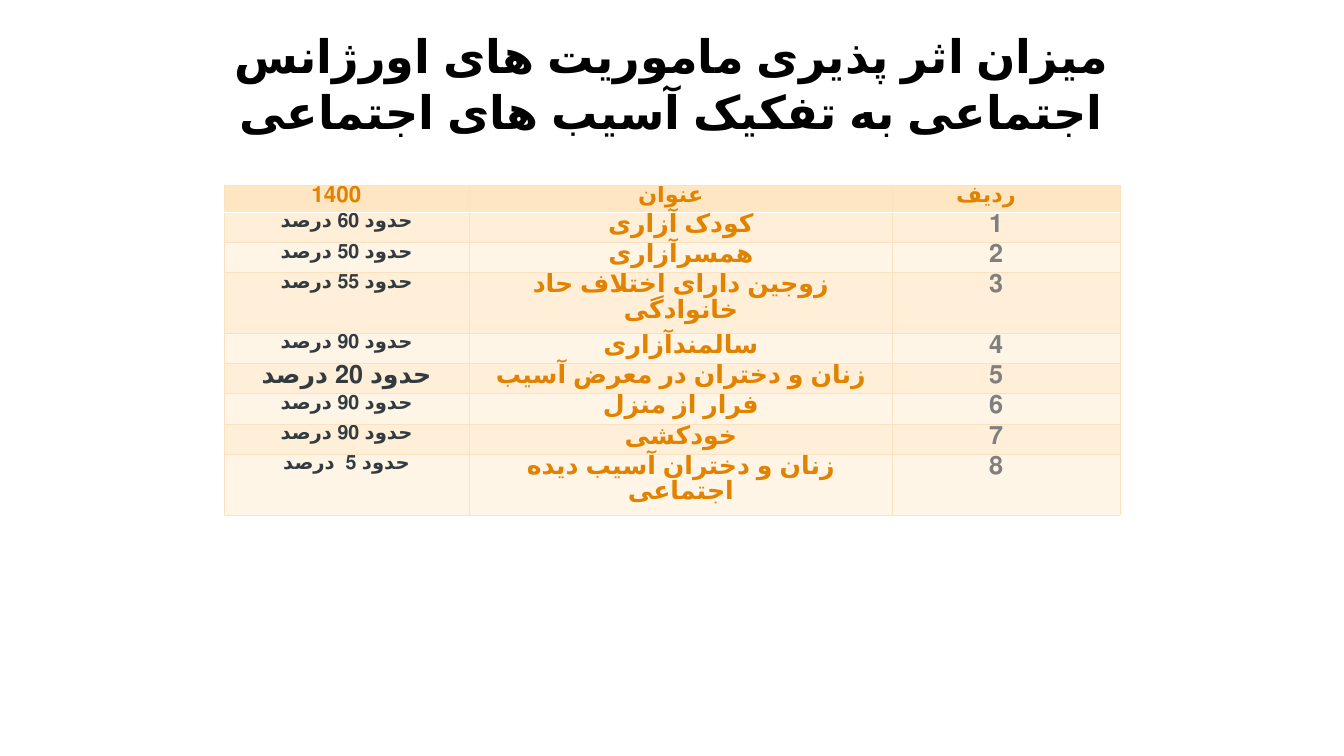
from lxml import etree
from pptx import Presentation
from pptx import util as u
from pptx.dml.color import RGBColor
from pptx.enum import text
from pptx.oxml.ns import qn

PX = 9144  # EMU per px, at 100 px to the inch
COLORS = {
    "title": "000000",
    "accent": "E18300",
    "share": "323C40",
    "number": "7F7F7F",
    "header": "FFE6C3",
    "band": "FFEFD9",
    "plain": "FFF5E7",
    "border": "FBE1BD",
    "rule": "FFFFFF",
}
LEFT, WIDTH = 444, 1778
COLUMN_WIDTHS = [487, 840, 451]
HEADER_HEIGHT, LINE_HEIGHT, TWO_LINE_HEIGHT = 54, 60, 116
LEVEL_INDENT = 40

TITLE = "میزان اثر پذیری ماموریت های اورژانس\nاجتماعی به تفکیک آسیب های اجتماعی"
HEADINGS = [("1400", 1), ("عنوان", 1), ("ردیف", 2)]
# share, harm, size of the share text, height of the row
HARMS = [
    ("حدود 60 درصد", "کودک آزاری", 28, LINE_HEIGHT),
    ("حدود 50 درصد", "همسرآزاری", 28, LINE_HEIGHT),
    ("حدود 55 درصد", "زوجین دارای اختلاف حاد\nخانوادگی", 28, TWO_LINE_HEIGHT),
    ("حدود 90 درصد", "سالمندآزاری", 28, LINE_HEIGHT),
    ("حدود 20 درصد", "زنان و دختران در معرض آسیب", 36, LINE_HEIGHT),
    ("حدود 90 درصد", "فرار از منزل", 28, LINE_HEIGHT),
    ("حدود 90 درصد", "خودکشی", 28, LINE_HEIGHT),
    ("حدود 5  درصد", "زنان و دختران آسیب دیده\nاجتماعی", 28, TWO_LINE_HEIGHT),
]


def px(length):
    return u.Emu(length * PX)


def write(frame, words, *, size, color, font="Arial", level=0):
    """Put one bold, centred, right-to-left paragraph into a text frame."""
    paragraph = frame.paragraphs[0]
    paragraph.alignment = text.PP_ALIGN.CENTER
    paragraph.level = level
    properties = paragraph._p.get_or_add_pPr()
    properties.set("rtl", "1")
    properties.set("marL", str(px(level * LEVEL_INDENT)))
    properties.set("indent", "0")
    for index, line in enumerate(words.split("\n")):
        if index:
            paragraph.add_line_break()
        run = paragraph.add_run()
        run.text = line
        run.font.size = u.Pt(size)
        run.font.bold = True
        run.font.color.rgb = RGBColor.from_string(COLORS[color])
        run.font.name = font
        run._r.get_or_add_rPr().set("lang", "fa-IR")
    for line_break in paragraph._p.findall(qn("a:br")):
        etree.SubElement(line_break, qn("a:rPr"), sz=str(size * 100), b="1")


class SlideBuilder:
    def __init__(self, slide):
        self.slide = slide

    def title(self, words, left, top, width, height):
        heading = self.slide.shapes.title
        heading.left, heading.top = px(left), px(top)
        heading.width, heading.height = px(width), px(height)
        frame = heading.text_frame
        frame.margin_left = frame.margin_right = px(6)
        frame.margin_top = frame.margin_bottom = px(6)
        frame.word_wrap = True
        frame.vertical_anchor = text.MSO_ANCHOR.MIDDLE
        frame.auto_size = text.MSO_AUTO_SIZE.SHAPE_TO_FIT_TEXT
        write(frame, words, size=66, color="title")

    def table(self, left, top, column_widths, row_heights):
        table = self.slide.shapes.add_table(
            len(row_heights), len(column_widths), px(left), px(top),
            px(sum(column_widths)), px(sum(row_heights))).table
        for column, width in zip(table.columns, column_widths):
            column.width = px(width)
        for row, height in zip(table.rows, row_heights):
            row.height = px(height)
        return table

    def border(self, cell, side, color, points):
        line = etree.SubElement(cell._tc.get_or_add_tcPr(), qn(f"a:ln{side}"),
                                w=str(u.Pt(points)))
        fill = etree.SubElement(line, qn("a:solidFill"))
        etree.SubElement(fill, qn("a:srgbClr"), val=COLORS[color])

    def cell(self, cell, words, fill, rules=(), **style):
        """Fill a cell; rules names the sides that carry the thick white line."""
        for side in "LRTB":
            if side in rules:
                self.border(cell, side, "rule", 2)
            else:
                self.border(cell, side, "border", 0.75)
        cell.fill.solid()
        cell.fill.fore_color.rgb = RGBColor.from_string(COLORS[fill])
        cell.margin_left = cell.margin_right = px(7)
        cell.margin_top = cell.margin_bottom = 0
        write(cell.text_frame, words, **style)


def main():
    deck = Presentation()
    deck.slide_width, deck.slide_height = px(2667), px(1500)
    builder = SlideBuilder(deck.slides.add_slide(deck.slide_layouts[5]))
    builder.title(TITLE, LEFT, 48, WIDTH, 233)

    heights = [HEADER_HEIGHT] + [height for *_, height in HARMS]
    table = builder.table(LEFT, 367, COLUMN_WIDTHS, heights)
    for column, (heading, level) in enumerate(HEADINGS):
        builder.cell(table.cell(0, column), heading, "header", rules="B",
                     size=32, color="accent", level=level)
    for number, (share, harm, share_size, _) in enumerate(HARMS, start=1):
        fill = "band" if number % 2 else "plain"
        rules = "T" if number == 1 else ""
        builder.cell(table.cell(number, 0), share, fill, rules,
                     size=share_size, color="share", font="Calibri")
        builder.cell(table.cell(number, 1), harm, fill, rules,
                     size=36, color="accent", font="Calibri")
        builder.cell(table.cell(number, 2), str(number), fill, rules,
                     size=36, color="number", font="Calibri", level=1)

    deck.save("out.pptx")


if __name__ == "__main__":
    main()
